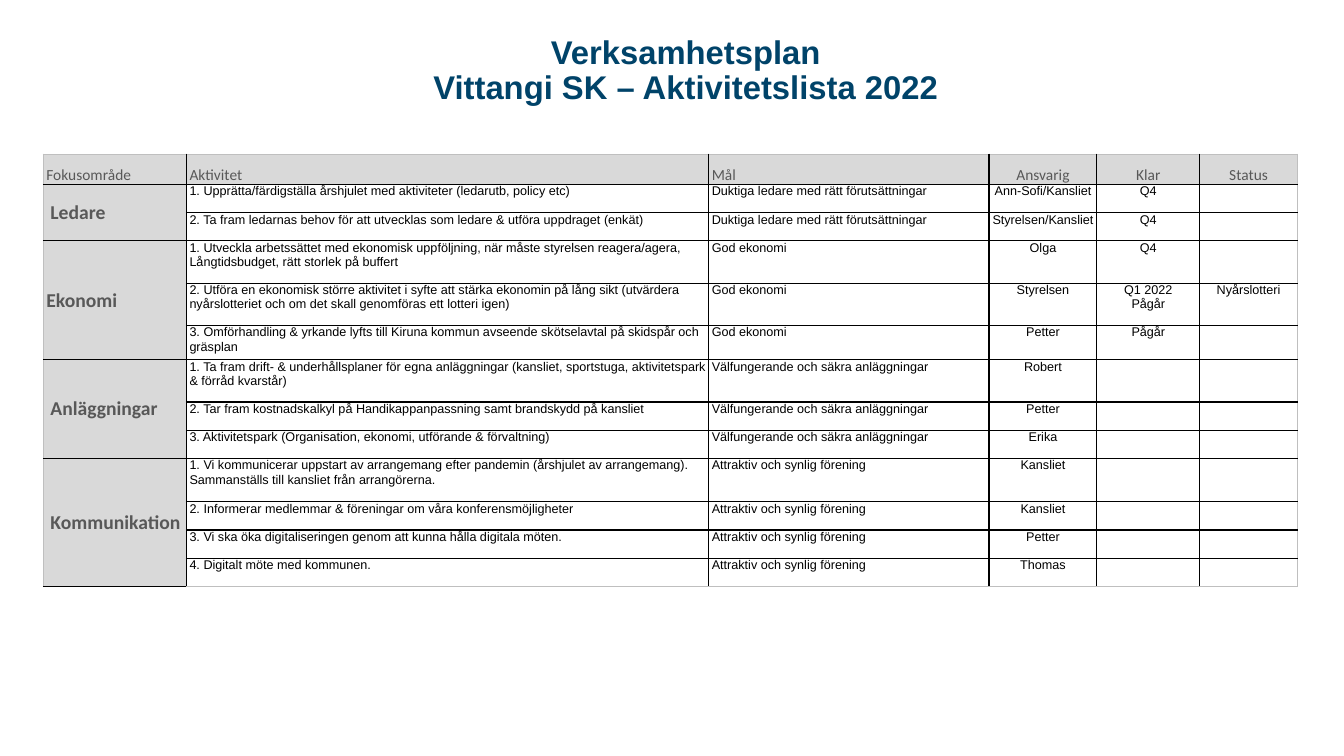
"""Builds the Vittangi SK activity list for 2022 as a one-slide plan."""
from lxml import etree
from pptx import Presentation
from pptx.dml.color import RGBColor
from pptx.enum.text import MSO_ANCHOR as Anchor, PP_ALIGN as Align
from pptx.oxml.ns import qn
from pptx.util import Inches, Pt

COLORS = {"title": "004369", "label": "585858", "text": "000000",
          "shade": "D9D9D9", "line": "000000", "frame": "BFBFBF"}

HEADINGS = ["Fokusområde", "Aktivitet", "Mål", "Ansvarig", "Klar", "Status"]
COLUMN_WIDTHS = [1.42, 5.18, 2.78, 1.07, 1.02, 0.97]
HEADER_HEIGHT = 0.3

FOCUS_AREAS = [
    ("Ledare", 0.07, "Duktiga ledare med rätt förutsättningar", [
        (0.28, "1. Upprätta/färdigställa årshjulet med aktiviteter (ledarutb, policy etc)",
         "Ann-Sofi/Kansliet", "Q4", ""),
        (0.28, "2. Ta fram ledarnas behov för att utvecklas som ledare & utföra uppdraget (enkät)",
         "Styrelsen/Kansliet", "Q4", ""),
    ]),
    ("Ekonomi", 0.03, "God ekonomi", [
        (0.42, "1. Utveckla arbetssättet med ekonomisk uppföljning, när måste styrelsen "
         "reagera/agera, Långtidsbudget, rätt storlek på buffert", "Olga", "Q4", ""),
        (0.42, "2. Utföra en ekonomisk större aktivitet i syfte att stärka ekonomin på lång sikt "
         "(utvärdera nyårslotteriet och om det skall genomföras ett lotteri igen)",
         "Styrelsen", "Q1 2022\nPågår", "Nyårslotteri"),
        (0.34, "3. Omförhandling & yrkande lyfts till Kiruna kommun avseende skötselavtal på "
         "skidspår och gräsplan", "Petter", "Pågår", ""),
    ]),
    ("Anläggningar", 0.07, "Välfungerande och säkra anläggningar", [
        (0.42, "1. Ta fram drift- & underhållsplaner för egna anläggningar (kansliet, sportstuga, "
         "aktivitetspark & förråd kvarstår)", "Robert", "", ""),
        (0.28, "2. Tar fram kostnadskalkyl på Handikappanpassning samt brandskydd på kansliet",
         "Petter", "", ""),
        (0.28, "3. Aktivitetspark (Organisation, ekonomi, utförande & förvaltning)",
         "Erika", "", ""),
    ]),
    ("Kommunikation", 0.07, "Attraktiv och synlig förening", [
        (0.43, "1. Vi kommunicerar uppstart av arrangemang efter pandemin (årshjulet av "
         "arrangemang). Sammanställs till kansliet från arrangörerna.", "Kansliet", "", ""),
        (0.28, "2. Informerar medlemmar & föreningar om våra konferensmöjligheter",
         "Kansliet", "", ""),
        (0.28, "3. Vi ska öka digitaliseringen genom att kunna hålla digitala möten.",
         "Petter", "", ""),
        (0.28, "4. Digitalt möte med kommunen.", "Thomas", "", ""),
    ]),
]


def write(frame, text, size=9, font="Arial", color="text", bold=False,
          align=Align.LEFT, spacing=1.0):
    frame.word_wrap = True
    for index, line in enumerate(text.split("\n")):
        paragraph = frame.paragraphs[0] if index == 0 else frame.add_paragraph()
        paragraph.alignment = align
        paragraph.line_spacing = spacing
        paragraph.text = line
        for run in paragraph.runs:
            run.font.size = Pt(size)
            run.font.name = font
            run.font.bold = bold
            run.font.color.rgb = RGBColor.from_string(COLORS[color])
        if not line:
            end = etree.SubElement(paragraph._p, qn("a:endParaRPr"))
            end.set("sz", str(size * 100))


def draw_borders(cell, edges):
    properties = cell._tc.get_or_add_tcPr()
    for index, (side, color) in enumerate(edges.items()):
        border = etree.Element(qn(f"a:ln{side}"), w=str(Pt(1)))
        fill = etree.SubElement(border, qn("a:solidFill"))
        etree.SubElement(fill, qn("a:srgbClr"), val=COLORS[color])
        properties.insert(index, border)


deck = Presentation()
deck.slide_width, deck.slide_height = Inches(13.33), Inches(7.5)
slide = deck.slides.add_slide(deck.slide_layouts[6])

title = slide.shapes.add_textbox(Inches(2.41), Inches(0.17), Inches(8.78), Inches(0.94))
title.text_frame.vertical_anchor = Anchor.BOTTOM
write(title.text_frame, "Verksamhetsplan\vVittangi SK – Aktivitetslista 2022",
      size=23.4, color="title", bold=True, align=Align.CENTER, spacing=0.9)

heights = [HEADER_HEIGHT] + [row[0] for area in FOCUS_AREAS for row in area[3]]
plan = slide.shapes.add_table(len(heights), len(HEADINGS), Inches(0.43), Inches(1.53),
                              Inches(sum(COLUMN_WIDTHS)), Inches(sum(heights))).table
for column, width in zip(plan.columns, COLUMN_WIDTHS):
    column.width = Inches(width)
for row, height in zip(plan.rows, heights):
    row.height = Inches(height)

last_row, last_column = len(heights) - 1, len(HEADINGS) - 1
for r in range(len(heights)):
    for c in range(len(HEADINGS)):
        cell = plan.cell(r, c)
        cell.margin_left = cell.margin_right = Inches(0.03)
        cell.margin_top = cell.margin_bottom = 0
        if r == 0 or c == 0:
            cell.fill.solid()
            cell.fill.fore_color.rgb = RGBColor.from_string(COLORS["shade"])
        else:
            cell.fill.background()
        draw_borders(cell, {"L": "frame" if c == 0 else "line",
                            "R": "frame" if c == last_column else "line",
                            "T": "frame" if r == 0 else "line",
                            "B": "frame" if r == last_row else "line"})

for c, heading in enumerate(HEADINGS):
    plan.cell(0, c).vertical_anchor = Anchor.BOTTOM
    write(plan.cell(0, c).text_frame, heading, size=11, font="Calibri", color="label",
          align=Align.CENTER if c > 2 else Align.LEFT)

r = 1
for area, indent, goal, activities in FOCUS_AREAS:
    focus = plan.cell(r, 0)
    focus.merge(plan.cell(r + len(activities) - 1, 0))
    focus.vertical_anchor = Anchor.MIDDLE
    focus.margin_left = Inches(indent)
    write(focus.text_frame, area, size=14, font="Calibri", color="label", bold=True)
    for height, activity, owner, due, status in activities:
        for c, text in enumerate([activity, goal, owner, due, status], start=1):
            write(plan.cell(r, c).text_frame, text,
                  align=Align.CENTER if c > 2 else Align.LEFT)
        r += 1

deck.save("out.pptx")
